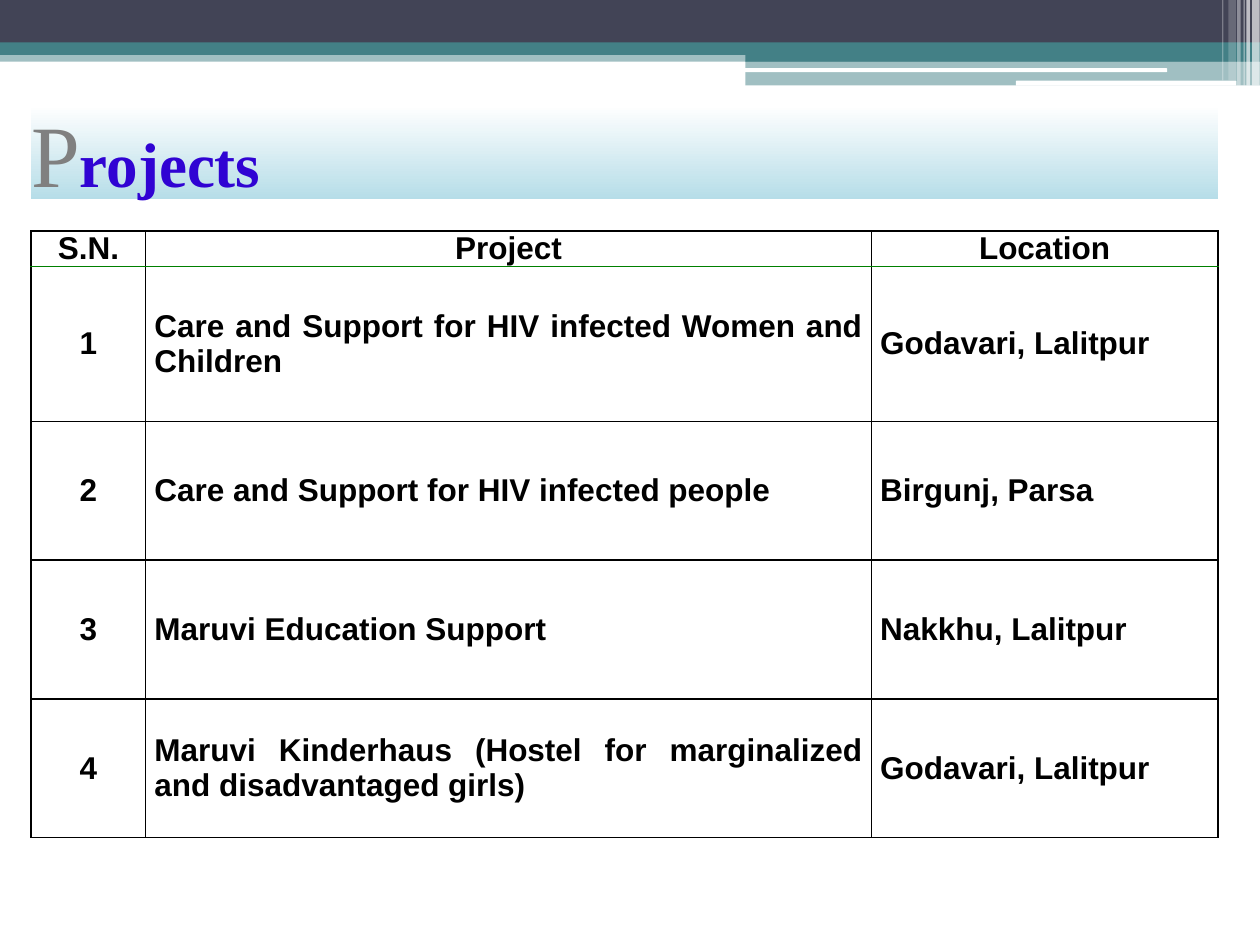
import pptx
import pptx.dml.color
import pptx.enum.shapes
import pptx.enum.text
import pptx.oxml
import pptx.oxml.ns
import pptx.util

Pt = pptx.util.Pt
Shape = pptx.enum.shapes.MSO_SHAPE
Align = pptx.enum.text.PP_ALIGN
Anchor = pptx.enum.text.MSO_ANCHOR

NAVY, TEAL, WHITE, BLACK, GREEN = "424456", "438086", "FFFFFF", "000000", "008000"

# left, top, width, height, colour, opacity in percent
BANDS = [
    (0, 28.8, 720, 6.5, TEAL, 50),
    (0, 0, 720, 24.5, NAVY, 100),
    (0, 24.2, 720, 7.2, TEAL, 100),
    (426, 28.1, 294, 7.2, TEAL, 100),
    (426, 34.6, 294, 14.2, TEAL, 50),
]
PILLS = [
    (425.5, 39, 241.5, 2.2, WHITE, 100),
    (580.5, 46.1, 126, 2.9, WHITE, 100),
]
# left, width, height, opacity in percent
STRIPES = [
    (715.5, 4.3, 49, 65),
    (712.2, 2, 49, 65),
    (710.6, 0.7, 49, 60),
    (707, 2, 49, 40),
    (702, 4.3, 46, 20),
    (698.4, 0.7, 46, 30),
]
TITLE = [
    ("P", dict(size=50, font="Times New Roman", color="808080")),
    ("rojects", dict(size=36, font="Times New Roman", color="3003D3", bold=True)),
]
LEFT, WIDTH = 17.8, 678.2
COLS = [65.5, 414.7, 198]
ROWS = [20, 88.6, 79.3, 79.3, 79.3]
CELLS = [
    ("S.N.", "Project", "Location"),
    ("1", "Care and Support for HIV infected Women and Children", "Godavari, Lalitpur"),
    ("2", "Care and Support for HIV infected people", "Birgunj, Parsa"),
    ("3", "Maruvi Education Support", "Nakkhu, Lalitpur"),
    ("4", "Maruvi Kinderhaus (Hostel for marginalized and disadvantaged girls)",
     "Godavari, Lalitpur"),
]


def rgb(code):
    return pptx.dml.color.RGBColor.from_string(code)


def write(para, text, size=18, font="Arial", color=BLACK, bold=False):
    run = para.add_run()
    run.text = text
    run.font.size = Pt(size)
    run.font.name = font
    run.font.bold = bold
    run.font.color.rgb = rgb(color)


def block(kind, left, top, width, height):
    """Add a shape with no line and no shadow."""
    shape = slide.shapes.add_shape(kind, Pt(left), Pt(top), Pt(width), Pt(height))
    shape.shadow.inherit = False
    shape.line.fill.background()
    return shape


def tint(shape, color, alpha):
    """Fill a shape with one colour at an opacity in percent."""
    shape.fill.solid()
    shape.fill.fore_color.rgb = rgb(color)
    if alpha < 100:
        node = shape.fill._xPr.find(".//" + pptx.oxml.ns.qn("a:srgbClr"))
        node.append(pptx.oxml.parse_xml(
            f'<a:alpha {pptx.oxml.ns.nsdecls("a")} val="{alpha * 1000}"/>'))


def edge(cell, side, color):
    """Draw one border of a cell; side is L, R, T or B."""
    cell._tc.get_or_add_tcPr().append(pptx.oxml.parse_xml(
        f'<a:ln{side} {pptx.oxml.ns.nsdecls("a")} w="12700"><a:solidFill>'
        f'<a:srgbClr val="{color}"/></a:solidFill></a:ln{side}>'))


def inset(item, side):
    """Set the side margins of a cell or text frame, with none above or below."""
    item.margin_top = item.margin_bottom = 0
    item.margin_left = item.margin_right = Pt(side)


def draw_bands():
    for *box, color, alpha in BANDS:
        tint(block(Shape.RECTANGLE, *box), color, alpha)
    for *box, color, alpha in PILLS:
        tint(block(Shape.ROUNDED_RECTANGLE, *box), color, alpha)
    for left, width, height, alpha in STRIPES:
        tint(block(Shape.RECTANGLE, left, 0, width, height), WHITE, alpha)


def draw_table():
    frame = slide.shapes.add_table(
        len(ROWS), len(COLS), Pt(LEFT), Pt(132), Pt(WIDTH), Pt(sum(ROWS)))
    table = frame.table
    table.first_row = table.horz_banding = False
    for col, width in zip(table.columns, COLS):
        col.width = Pt(width)
    for r, (row, height) in enumerate(zip(table.rows, ROWS)):
        row.height = Pt(height)
        for c, cell in enumerate(row.cells):
            inset(cell, 5)
            cell.vertical_anchor = Anchor.MIDDLE if r else Anchor.TOP
            para = cell.text_frame.paragraphs[0]
            para.alignment = Align.JUSTIFY if r and c else Align.CENTER
            write(para, CELLS[r][c], bold=True)
            edge(cell, "L", BLACK)
            edge(cell, "R", BLACK)
            edge(cell, "T", GREEN if r == 1 else BLACK)
            edge(cell, "B", GREEN if r == 0 else BLACK)
            cell.fill.background()


def draw_title():
    shape = block(Shape.RECTANGLE, LEFT, 60, WIDTH, 54)
    shape.fill.gradient()
    shape.fill.gradient_angle = 270
    for stop, place, color in zip(shape.fill.gradient_stops, (0, 1), (WHITE, "B6DDE8")):
        stop.position = place
        stop.color.rgb = rgb(color)
    frame = shape.text_frame
    frame.word_wrap = True
    frame.vertical_anchor = Anchor.MIDDLE
    inset(frame, 0)
    para = frame.paragraphs[0]
    para.alignment = Align.LEFT
    para.space_after = Pt(10)
    for text, style in TITLE:
        write(para, text, **style)


deck = pptx.Presentation()
deck.slide_width, deck.slide_height = Pt(720), Pt(540)
slide = deck.slides.add_slide(deck.slide_layouts[6])
draw_bands()
draw_table()
draw_title()
deck.save("out.pptx")
